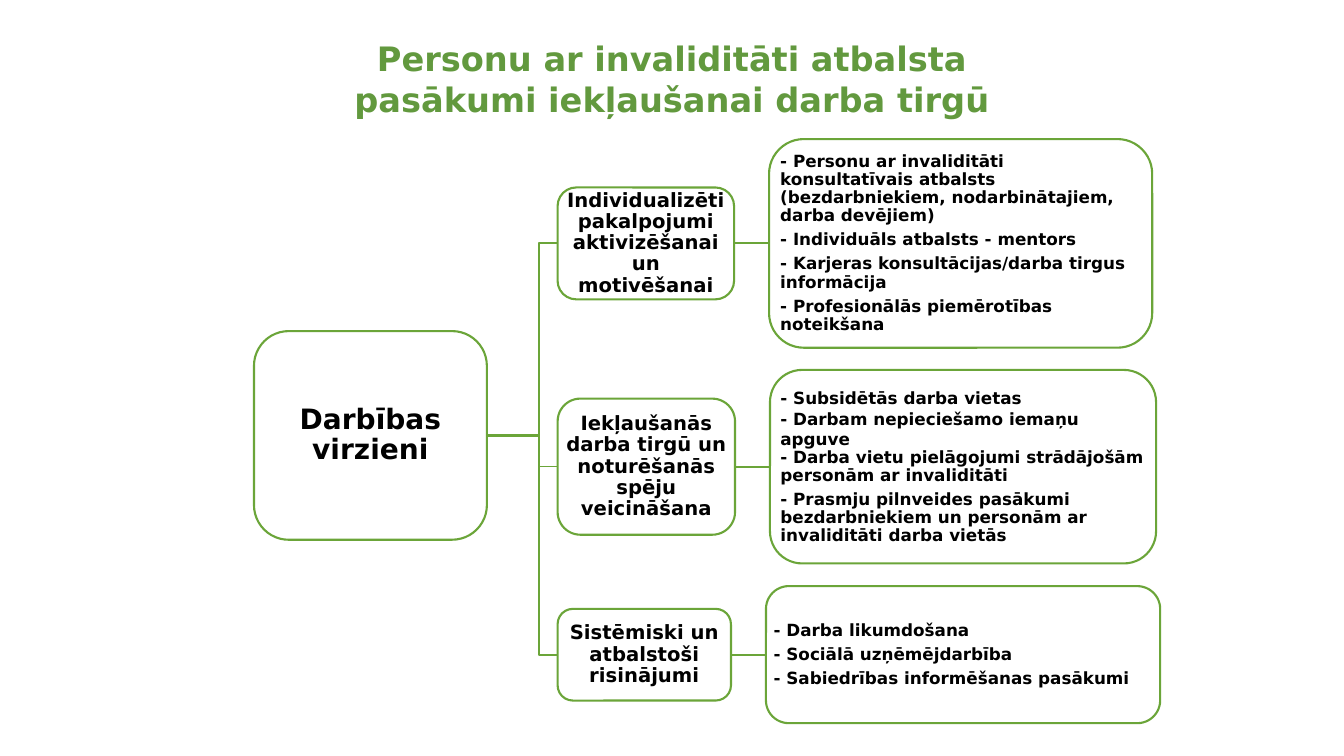
from dataclasses import dataclass

from lxml.etree import SubElement
from pptx import Presentation
from pptx.dml.color import RGBColor
from pptx.enum.shapes import MSO_CONNECTOR, MSO_SHAPE
from pptx.enum.text import MSO_ANCHOR, PP_ALIGN
from pptx.oxml.ns import qn
from pptx.util import Inches, Pt


@dataclass(frozen=True)
class Theme:
    font: str = "DejaVu Sans"
    heading: RGBColor = RGBColor(0x62, 0x99, 0x3E)
    border: RGBColor = RGBColor(0x6B, 0xA5, 0x39)
    surface: RGBColor = RGBColor(0xFF, 0xFF, 0xFF)
    ink: RGBColor = RGBColor(0, 0, 0)
    heading_size: int = 24
    root_size: int = 20
    topic_size: int = 14
    detail_size: int = 12
    border_width: float = 1.5
    thin_width: float = 1
    line_spacing: float = 0.9
    space_share: float = 0.35


@dataclass(frozen=True)
class Box:
    left: float
    middle: float
    width: float
    height: float

    @property
    def right(self):
        return self.left + self.width

    @property
    def frame(self):
        top = self.middle - self.height / 2
        return across(self.left), down(top), across(self.width), down(self.height)


@dataclass(frozen=True)
class Branch:
    middle: float
    topic: str
    topic_share: tuple
    details: tuple
    detail_share: tuple
    tight: int = 0
    trunk_width: float = Theme.border_width


THEME = Theme()
SLIDE_WIDTH, SLIDE_HEIGHT = Inches(13.33), Inches(7.5)
TITLE = Box(21.38, 10.27, 57.24, 11.73)
ROOT = Box(18.9, 57.6, 17.33, 27.6)
TOPIC_LEFT = 41.49
DETAIL_GAP = 2.6
TRUNK_BEND = 0.74

BRANCHES = (
    Branch(
        32.2,
        "Individualizēti pakalpojumi aktivizēšanai un motivēšanai",
        (13.13, 14.8),
        (
            "- Personu ar invaliditāti konsultatīvais atbalsts "
            "(bezdarbniekiem, nodarbinātajiem, darba devējiem)",
            "- Individuāls atbalsts - mentors",
            "- Karjeras konsultācijas/darba tirgus informācija",
            "- Profesionālās piemērotības noteikšana",
        ),
        (28.51, 27.6),
    ),
    Branch(
        61.73,
        "Iekļaušanās darba tirgū un noturēšanās spēju veicināšana",
        (13.2, 18),
        (
            "- Subsidētās darba vietas",
            "- Darbam nepieciešamo iemaņu apguve",
            "- Darba vietu pielāgojumi strādājošām personām ar invaliditāti",
            "- Prasmju pilnveides pasākumi bezdarbniekiem un personām ar "
            "invaliditāti darba vietās",
        ),
        (28.73, 25.6),
        tight=2,
        trunk_width=Theme.thin_width,
    ),
    Branch(
        86.6,
        "Sistēmiski un atbalstoši risinājumi",
        (12.9, 12.13),
        (
            "- Darba likumdošana",
            "- Sociālā uzņēmējdarbība",
            "- Sabiedrības informēšanas pasākumi",
        ),
        (29.33, 18.13),
    ),
)


def across(share):
    return round(SLIDE_WIDTH * share / 100)


def down(share):
    return round(SLIDE_HEIGHT * share / 100)


def add_text(paragraph, text, size, color, align):
    paragraph.alignment = align
    run = paragraph.add_run()
    run.text = text
    run.font.name = THEME.font
    run.font.size = Pt(size)
    run.font.bold = True
    run.font.color.rgb = color


def add_title(slide, box):
    frame = slide.shapes.add_textbox(*box.frame).text_frame
    frame.word_wrap = True
    add_text(
        frame.paragraphs[0],
        "Personu ar invaliditāti atbalsta pasākumi iekļaušanai darba tirgū",
        THEME.heading_size,
        THEME.heading,
        PP_ALIGN.CENTER,
    )


def add_card(slide, box, lines, size, align=PP_ALIGN.CENTER, tight=0):
    card = slide.shapes.add_shape(MSO_SHAPE.ROUNDED_RECTANGLE, *box.frame)
    card.shadow.inherit = False
    card.fill.solid()
    card.fill.fore_color.rgb = THEME.surface
    card.line.color.rgb = THEME.border
    card.line.width = Pt(THEME.border_width)
    frame = card.text_frame
    frame.word_wrap = True
    frame.vertical_anchor = MSO_ANCHOR.MIDDLE
    frame.margin_left = frame.margin_right = Inches(0.01)
    frame.margin_top = frame.margin_bottom = Inches(0.01)
    for index, line in enumerate(lines):
        paragraph = frame.add_paragraph() if index else frame.paragraphs[0]
        if index >= tight:
            paragraph.line_spacing = THEME.line_spacing
            paragraph.space_after = Pt(size * THEME.space_share)
        add_text(paragraph, line, size, THEME.ink, align)


def add_link(slide, kind, start, end, width):
    link = slide.shapes.add_connector(
        kind, across(start.right), down(start.middle), across(end.left), down(end.middle)
    )
    link.line.color.rgb = THEME.border
    link.line.width = Pt(width)
    properties = link._element.spPr
    SubElement(properties, qn("a:effectLst"))
    if kind == MSO_CONNECTOR.ELBOW:
        guides = properties.find(qn("a:prstGeom")).get_or_add_avLst()
        bend = SubElement(guides, qn("a:gd"))
        bend.set("name", "adj1")
        bend.set("fmla", f"val {round(TRUNK_BEND * 100000)}")


def add_branch(slide, root, branch):
    topic = Box(TOPIC_LEFT, branch.middle, *branch.topic_share)
    detail = Box(topic.right + DETAIL_GAP, branch.middle, *branch.detail_share)
    add_link(slide, MSO_CONNECTOR.ELBOW, root, topic, branch.trunk_width)
    add_link(slide, MSO_CONNECTOR.STRAIGHT, topic, detail, THEME.border_width)
    add_card(slide, topic, [branch.topic], THEME.topic_size)
    add_card(slide, detail, branch.details, THEME.detail_size, PP_ALIGN.LEFT, branch.tight)


def main():
    deck = Presentation()
    deck.slide_width, deck.slide_height = SLIDE_WIDTH, SLIDE_HEIGHT
    slide = deck.slides.add_slide(deck.slide_layouts[6])
    add_title(slide, TITLE)
    for branch in BRANCHES:
        add_branch(slide, ROOT, branch)
    add_card(slide, ROOT, ["Darbības virzieni"], THEME.root_size)
    deck.save("out.pptx")


if __name__ == "__main__":
    main()
